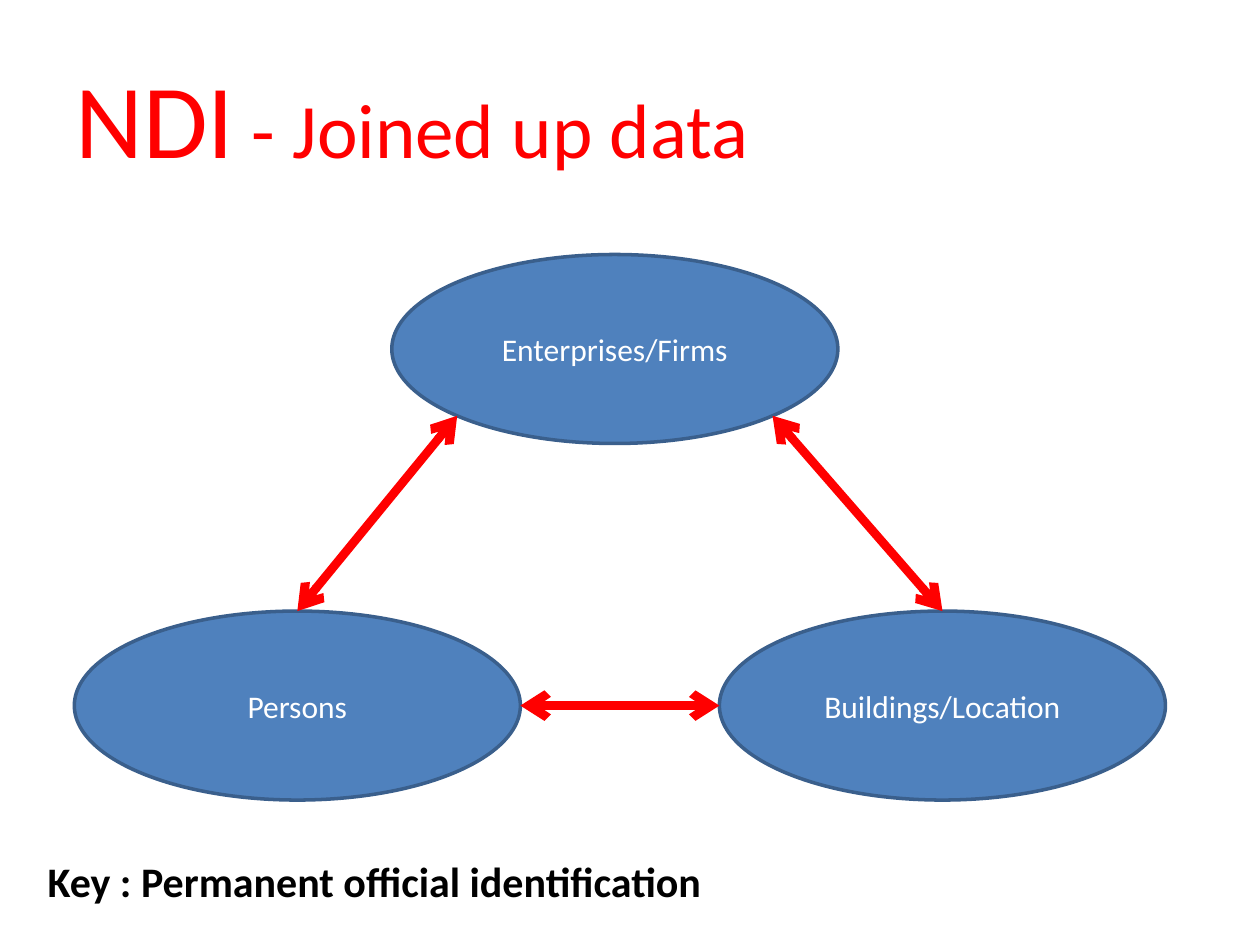
from dataclasses import dataclass
from math import cos, radians, sin

from lxml import etree
from pptx import Presentation
from pptx import util as u
from pptx.dml.color import RGBColor
from pptx.enum import shapes, text
from pptx.oxml.ns import qn


@dataclass(frozen=True)
class Theme:
    font: str = "Calibri"
    accent: str = "FF0000"
    node: str = "4F81BD"
    node_edge: str = "3A5F8C"
    light: str = "FFFFFF"
    dark: str = "000000"
    headline: int = 60
    subtitle: int = 44
    label: int = 18
    key: int = 24
    edge_width: int = 2
    arrow_width: int = 5


class Canvas:
    """Draws on one page, measured on a grid of 100 columns by 75 rows."""

    COLUMNS, ROWS = 100, 75
    NODE_SIZE = (35.4, 15)

    def __init__(self, deck, theme):
        self.theme = theme
        self.page = deck.slides.add_slide(deck.slide_layouts[6])
        self.column = deck.slide_width / self.COLUMNS
        self.row = deck.slide_height / self.ROWS

    def place(self, *lengths):
        units = (self.column, self.row) * 2
        return [u.Emu(round(n * unit)) for n, unit in zip(lengths, units)]

    def add_spans(self, frame, spans, align, bold=False):
        frame.word_wrap = True
        frame.vertical_anchor = text.MSO_ANCHOR.MIDDLE
        para = frame.paragraphs[0]
        para.alignment = align
        for words, size, color in spans:
            span = para.add_run()
            span.text = words
            span.font.name = self.theme.font
            span.font.size = u.Pt(size)
            span.font.bold = bold
            span.font.color.rgb = RGBColor.from_string(color)

    def label(self, area, spans, align=text.PP_ALIGN.LEFT, bold=False):
        box = self.page.shapes.add_textbox(*self.place(*area))
        self.add_spans(box.text_frame, spans, align, bold)

    def node(self, center, name):
        (x, y), (width, height) = center, self.NODE_SIZE
        area = self.place(x - width / 2, y - height / 2, width, height)
        oval = self.page.shapes.add_shape(shapes.MSO_SHAPE.OVAL, *area)
        oval.shadow.inherit = False
        oval.fill.solid()
        oval.fill.fore_color.rgb = RGBColor.from_string(self.theme.node)
        oval.line.color.rgb = RGBColor.from_string(self.theme.node_edge)
        oval.line.width = u.Pt(self.theme.edge_width)
        self.add_spans(oval.text_frame,
                       [(name, self.theme.label, self.theme.light)],
                       text.PP_ALIGN.CENTER)

    def rim(self, center, degrees):
        """Point on a node's rim, clockwise from its right end."""
        (x, y), (width, height) = center, self.NODE_SIZE
        angle = radians(degrees)
        return x + width / 2 * cos(angle), y + height / 2 * sin(angle)

    def arrow(self, start, end):
        link = self.page.shapes.add_connector(
            shapes.MSO_CONNECTOR.STRAIGHT, *self.place(*start, *end))
        link.line.color.rgb = RGBColor.from_string(self.theme.accent)
        link.line.width = u.Pt(self.theme.arrow_width)
        properties = link._element.spPr
        line = properties.find(qn("a:ln"))
        for side in ("a:headEnd", "a:tailEnd"):
            etree.SubElement(line, qn(side), type="arrow")
        etree.SubElement(properties, qn("a:effectLst"))


def main():
    deck = Presentation()
    deck.slide_width, deck.slide_height = u.Inches(10), u.Inches(7.5)
    theme = Theme()
    canvas = Canvas(deck, theme)

    # Title
    canvas.label((5, 3, 90, 12.5),
                 [("NDI", theme.headline, theme.accent),
                  (" - Joined up data ", theme.subtitle, theme.accent)],
                 text.PP_ALIGN.JUSTIFY)

    # Triangle of registers
    firms, buildings, persons = (48.8, 27.7), (74.8, 56), (23.6, 56)
    canvas.node(firms, "Enterprises/Firms")
    canvas.node(buildings, "Buildings/Location")
    canvas.node(persons, "Persons")

    # Two-way links between the registers
    for start, start_angle, end, end_angle in (
            (firms, 135, persons, 270),
            (firms, 45, buildings, 270),
            (persons, 0, buildings, 180)):
        canvas.arrow(canvas.rim(start, start_angle), canvas.rim(end, end_angle))

    # Key
    canvas.label((2.8, 67.4, 72.4, 5),
                 [("Key : Permanent official identification", theme.key, theme.dark)],
                 bold=True)

    deck.save("out.pptx")


if __name__ == "__main__":
    main()
